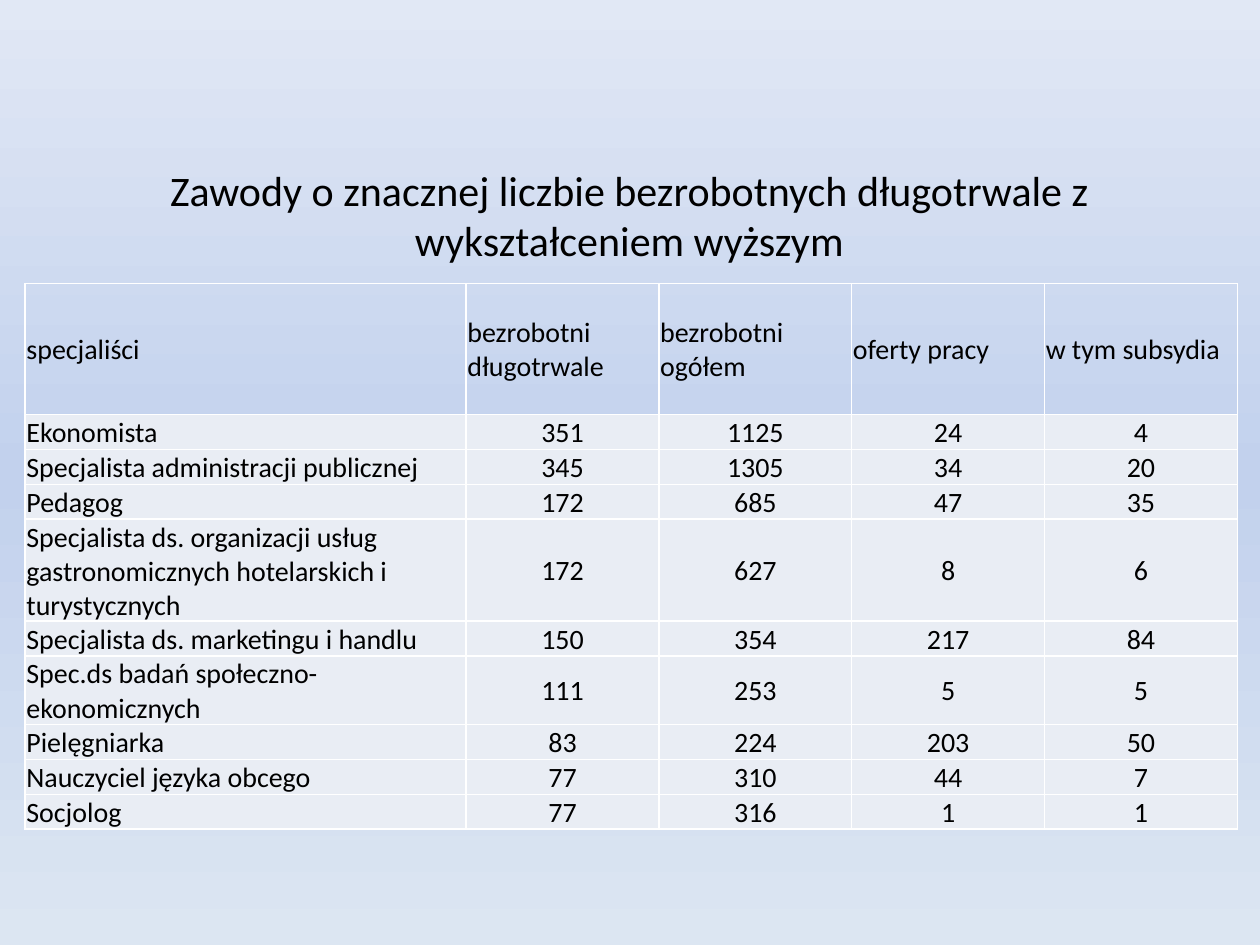
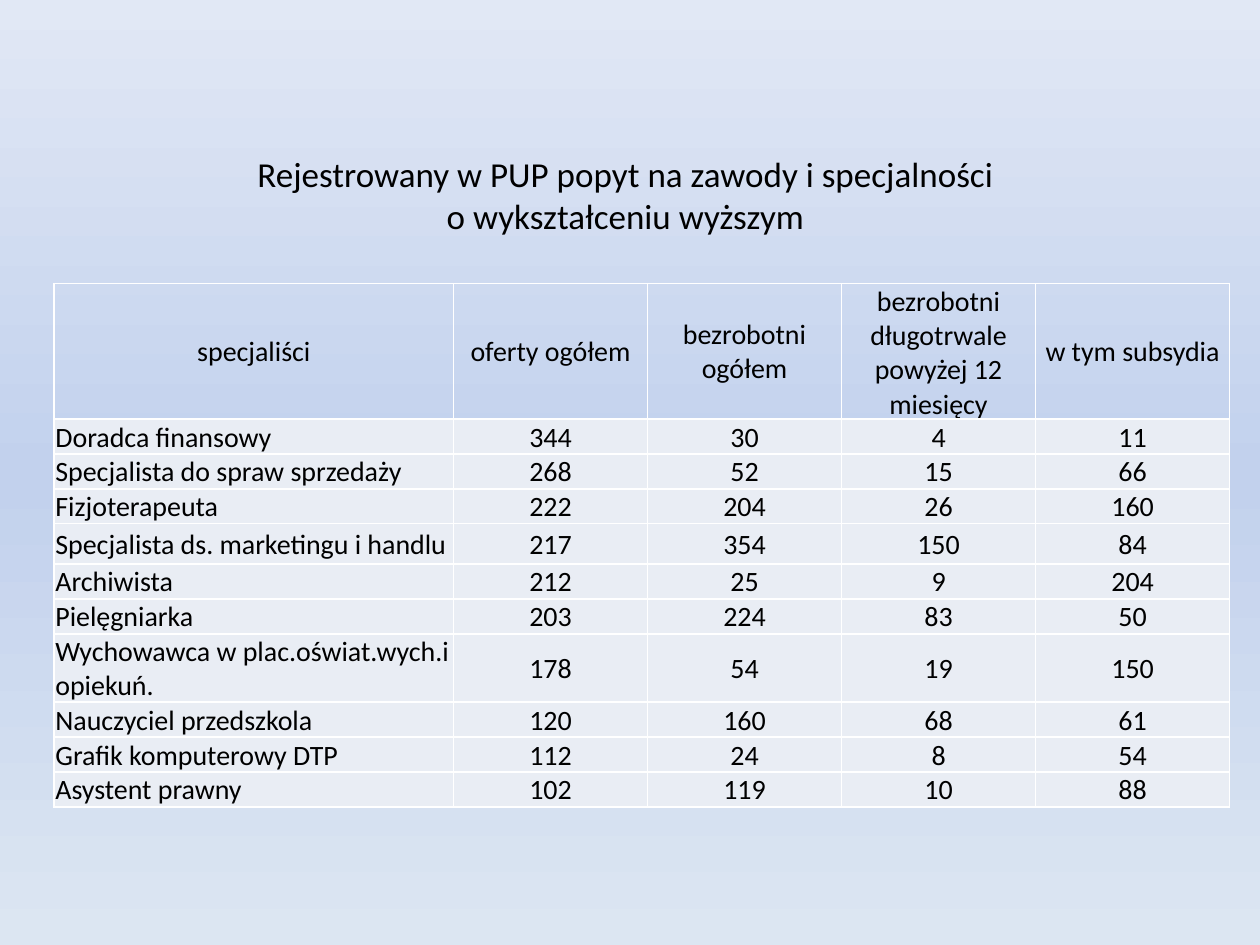
from lxml.etree import SubElement
from pptx import Presentation
from pptx.dml.color import RGBColor
from pptx.enum.text import MSO_ANCHOR, PP_ALIGN
from pptx.oxml.ns import qn
from pptx.util import Inches, Pt

# Content
SLIDES = [
    {
        "title": ["Zawody o znacznej liczbie bezrobotnych długotrwale z wykształceniem wyższym"],
        "title_top": 1.47, "title_size": 24,
        "table_at": (0.2, 2.25), "table_height": 4.33,
        "name_width": 3.5, "value_width": 1.53,
        "header_align": PP_ALIGN.LEFT,
        "row_height": 0.23, "special_heights": {0: 1.04, 4: 0.44, 6: 0.3},
        "rows": [
            ("specjaliści", "bezrobotni długotrwale", "bezrobotni ogółem",
             "oferty pracy", "w tym subsydia"),
            ("Ekonomista", 351, 1125, 24, 4),
            ("Specjalista administracji publicznej", 345, 1305, 34, 20),
            ("Pedagog", 172, 685, 47, 35),
            ("Specjalista ds. organizacji usług gastronomicznych hotelarskich i turystycznych",
             172, 627, 8, 6),
            ("Specjalista ds. marketingu i handlu", 150, 354, 217, 84),
            ("Spec.ds badań społeczno-ekonomicznych", 111, 253, 5, 5),
            ("Pielęgniarka", 83, 224, 203, 50),
            ("Nauczyciel języka obcego", 77, 310, 44, 7),
            ("Socjolog", 77, 316, 1, 1),
        ],
    },
    {
        "title": ["Rejestrowany w PUP popyt na zawody i specjalności ",
                  "o wykształceniu wyższym "],
        "title_top": 1.31, "title_size": 20,
        "table_at": (0.43, 2.25), "table_height": 4.16,
        "name_width": 3.17, "value_width": 1.54,
        "header_align": PP_ALIGN.CENTER,
        "row_height": 0.16, "special_heights": {4: 0.32},
        "rows": [
            ("specjaliści", "oferty ogółem", "bezrobotni ogółem",
             "bezrobotni długotrwale powyżej 12 miesięcy", "w tym subsydia"),
            ("Doradca finansowy", 344, 30, 4, 11),
            ("Specjalista do spraw sprzedaży", 268, 52, 15, 66),
            ("Fizjoterapeuta", 222, 204, 26, 160),
            ("Specjalista ds. marketingu i handlu", 217, 354, 150, 84),
            ("Archiwista", 212, 25, 9, 204),
            ("Pielęgniarka", 203, 224, 83, 50),
            ("Wychowawca w plac.oświat.wych.i opiekuń.", 178, 54, 19, 150),
            ("Nauczyciel przedszkola", 120, 160, 68, 61),
            ("Grafik komputerowy DTP", 112, 24, 8, 54),
            ("Asystent prawny", 102, 119, 10, 88),
        ],
    },
]

# Shared style
FONT = "Calibri"
TEXT, ROW_FILL, BORDER = "000000", "E9EDF4", "FFFFFF"
BACKGROUND = [(0, "DCE6F2"), (50, "C2D1ED"), (100, "E1E8F5")]
BACKGROUND_ANGLE = 270
CELL_SIZE = 16


def color(value):
    return RGBColor.from_string(value)


def add_run(p, text, size):
    r = p.add_run()
    r.text = text
    r.font.name = FONT
    r.font.size = Pt(size)
    r.font.bold = False
    r.font.color.rgb = color(TEXT)


def set_background(master):
    master.background.fill.solid()
    bg = master.element.find(".//" + qn("p:bgPr"))
    bg.remove(bg[0])
    grad = SubElement(bg, qn("a:gradFill"), rotWithShape="1")
    bg.insert(0, grad)
    stops = SubElement(grad, qn("a:gsLst"))
    for position, value in BACKGROUND:
        stop = SubElement(stops, qn("a:gs"), pos=str(position * 1000))
        SubElement(stop, qn("a:srgbClr"), val=value)
    SubElement(grad, qn("a:lin"), ang=str(BACKGROUND_ANGLE * 60000), scaled="0")


def set_borders(cell):
    tc_pr = cell._tc.get_or_add_tcPr()
    for side in ("lnL", "lnR", "lnT", "lnB"):
        line = SubElement(tc_pr, qn("a:" + side), w=str(Pt(1)))
        fill = SubElement(line, qn("a:solidFill"))
        SubElement(fill, qn("a:srgbClr"), val=BORDER)


def add_title(s, data):
    box = s.shapes.add_textbox(Inches(1.09), Inches(data["title_top"]),
                               Inches(7.81), Inches(0.47))
    tf = box.text_frame
    tf.word_wrap = True
    tf.vertical_anchor = MSO_ANCHOR.MIDDLE
    p = tf.paragraphs[0]
    p.alignment = PP_ALIGN.CENTER
    for i, line in enumerate(data["title"]):
        if i:
            p.add_line_break()
        add_run(p, line, data["title_size"])


def fill_cell(cell, text, align, is_header):
    set_borders(cell)
    if is_header:
        cell.fill.background()
    else:
        cell.fill.solid()
        cell.fill.fore_color.rgb = color(ROW_FILL)
    cell.margin_left = cell.margin_right = cell.margin_top = Inches(0.01)
    cell.margin_bottom = 0
    cell.vertical_anchor = MSO_ANCHOR.MIDDLE
    p = cell.text_frame.paragraphs[0]
    p.alignment = align
    add_run(p, str(text), CELL_SIZE)


def add_data_table(s, data):
    rows = data["rows"]
    left, top = data["table_at"]
    widths = [data["name_width"]] + [data["value_width"]] * (len(rows[0]) - 1)
    height = Inches(data["table_height"])
    frame = s.shapes.add_table(len(rows), len(widths), Inches(left), Inches(top),
                               Inches(sum(widths)), height)
    table = frame.table
    table.first_row = table.horz_banding = False
    for column, width in zip(table.columns, widths):
        column.width = Inches(width)
    for i, row in enumerate(rows):
        table.rows[i].height = Inches(data["special_heights"].get(i, data["row_height"]))
        for j, text in enumerate(row):
            if i == 0:
                align = data["header_align"]
            else:
                align = PP_ALIGN.CENTER if j else PP_ALIGN.LEFT
            fill_cell(table.cell(i, j), text, align, i == 0)
    # Rows grow to fit their text, so the frame is taller than their minimum
    frame.height = height


def main():
    prs = Presentation()
    prs.slide_width, prs.slide_height = Inches(10), Inches(7.5)
    set_background(prs.slide_master)
    for data in SLIDES:
        s = prs.slides.add_slide(prs.slide_layouts[6])
        add_title(s, data)
        add_data_table(s, data)
    prs.save("out.pptx")


if __name__ == "__main__":
    main()
